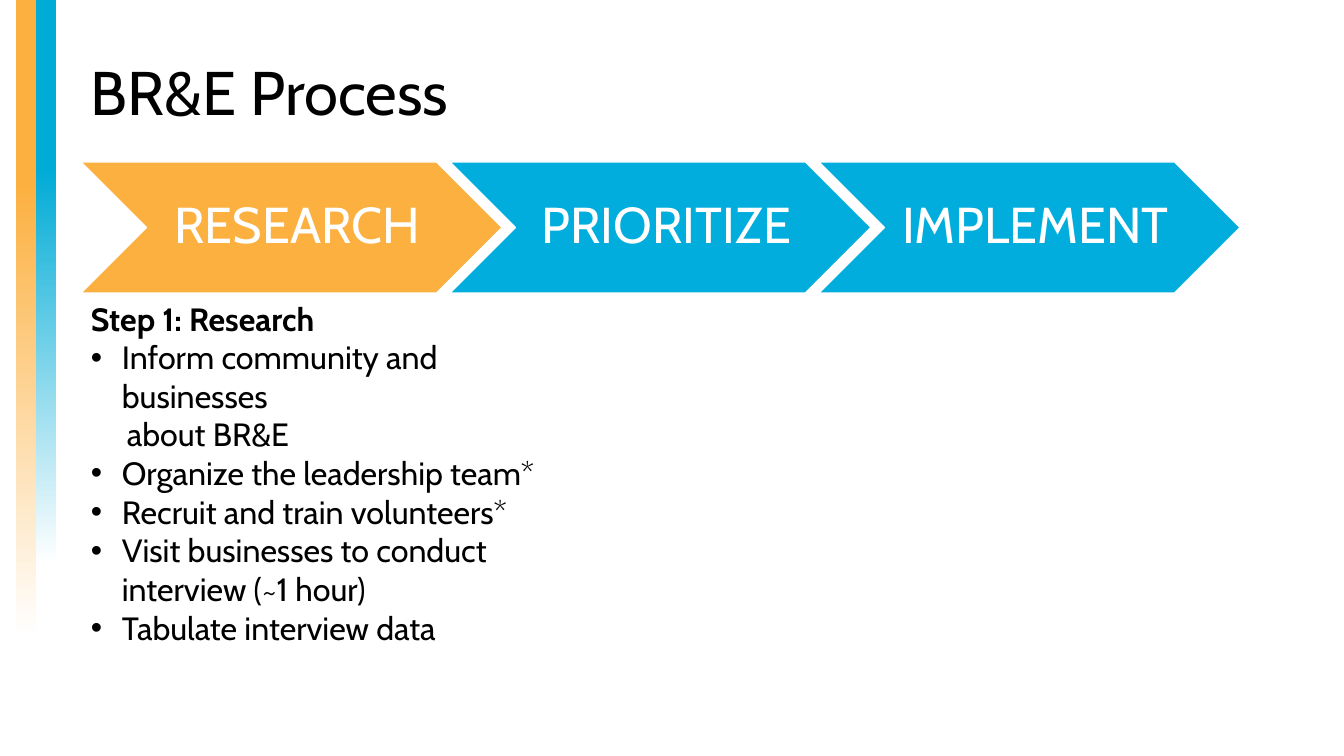
from dataclasses import dataclass

from lxml import etree
from pptx import Presentation
from pptx.dml.color import RGBColor
from pptx.enum.shapes import MSO_SHAPE as SHAPE
from pptx.enum.text import MSO_ANCHOR as ANCHOR, PP_ALIGN as ALIGN
from pptx.oxml.ns import qn
from pptx.util import Pt


@dataclass(frozen=True)
class Theme:
    font: str = "Cabin"
    bullet_font: str = "Arial"
    ink: str = "000000"
    white: str = "FFFFFF"
    active: str = "FBB040"
    step: str = "00ADDC"
    bar_orange: str = "FCB040"
    bar_blue: str = "00ABD6"
    title_size: int = 44
    step_size: int = 36
    body_size: int = 23


THEME = Theme()

TITLE = "BR&E Process"
STEPS = ["RESEARCH", "PRIORITIZE", "IMPLEMENT"]
ACTIVE_STEP = "RESEARCH"
HEADING, BULLET, CONTINUED = "heading", "bullet", "continued"
BODY = [
    (HEADING, "Step 1: Research"),
    (BULLET, "Inform community and businesses"),
    (CONTINUED, "about BR&E"),
    (BULLET, "Organize the leadership team*"),
    (BULLET, "Recruit and train volunteers*"),
    (BULLET, "Visit businesses to conduct interview (~1 hour)"),
    (BULLET, "Tabulate interview data"),
]
# left, height, colour, percent of the bar that stays solid
SIDE_BARS = [
    (16, 638, THEME.bar_orange, 29),
    (36, 564, THEME.bar_blue, 30),
]

PX = 914400 / 100.8
SLIDE_W, SLIDE_H = 1344, 756
BAR_W = 20
LEFT = 81
TITLE_BOX = (LEFT, 23, 1231, 146)
BODY_BOX = (LEFT, 294, 486, 361)
STEP_TOP, STEP_W, STEP_H, STEP_PITCH = 162, 421, 131, 369
LABEL_INSET, LABEL_W = 66, 290
BULLET_INDENT, CONTINUED_INDENT = 31, 36


def px(n):
    return round(n * PX)


def rgb(color):
    return RGBColor.from_string(color)


def add_shape(s, kind, box, color):
    sp = s.shapes.add_shape(kind, *map(px, box))
    sp.shadow.inherit = False
    sp.fill.solid()
    sp.fill.fore_color.rgb = rgb(color)
    sp.line.fill.background()
    return sp


def add_text_box(s, box, anchor=ANCHOR.TOP):
    tf = s.shapes.add_textbox(*map(px, box)).text_frame
    tf.word_wrap = True
    tf.vertical_anchor = anchor
    return tf


def write(p, text, size, color=THEME.ink, bold=False, align=ALIGN.LEFT, spacing=1.0):
    p.alignment = align
    p.line_spacing = spacing
    r = p.add_run()
    r.text = text
    r.font.name = THEME.font
    r.font.size = Pt(size)
    r.font.bold = bold
    r.font.color.rgb = rgb(color)


def indent(p, left, bullet=False):
    pPr = p._p.get_or_add_pPr()
    pPr.set("marL", str(px(left)))
    if bullet:
        pPr.set("indent", str(-px(left)))
        etree.SubElement(pPr, qn("a:buFont")).set("typeface", THEME.bullet_font)
        etree.SubElement(pPr, qn("a:buChar")).set("char", "•")


def add_side_bar(s, left, height, color, solid):
    """Draw a vertical bar that fades to white towards its foot."""
    fill = add_shape(s, SHAPE.RECTANGLE, (left, 0, BAR_W, height), color).fill
    fill.gradient()
    fill.gradient_angle = 270
    stops = [(solid / 100, color), (1, THEME.white)]
    for stop, (position, stop_color) in zip(fill.gradient_stops, stops):
        stop.position = position
        stop.color.rgb = rgb(stop_color)


def add_step(s, index, name):
    left = LEFT + index * STEP_PITCH
    color = THEME.active if name == ACTIVE_STEP else THEME.step
    sp = add_shape(s, SHAPE.CHEVRON, (left, STEP_TOP, STEP_W, STEP_H), color)
    sp.line.color.rgb = rgb(THEME.white)
    sp.line.width = Pt(1)
    box = (left + LABEL_INSET, STEP_TOP, LABEL_W, STEP_H)
    tf = add_text_box(s, box, ANCHOR.MIDDLE)
    tf.margin_left = px(16)
    tf.margin_top = tf.margin_right = tf.margin_bottom = px(5)
    write(tf.paragraphs[0], name, THEME.step_size, color=THEME.white,
          align=ALIGN.CENTER, spacing=0.9)


def add_body(s):
    tf = add_text_box(s, BODY_BOX)
    for i, (kind, text) in enumerate(BODY):
        p = tf.add_paragraph() if i else tf.paragraphs[0]
        if kind == BULLET:
            indent(p, BULLET_INDENT, bullet=True)
        elif kind == CONTINUED:
            indent(p, CONTINUED_INDENT)
        write(p, text, THEME.body_size, bold=kind == HEADING)


def main():
    prs = Presentation()
    prs.slide_width, prs.slide_height = px(SLIDE_W), px(SLIDE_H)
    s = prs.slides.add_slide(prs.slide_layouts[6])
    for bar in SIDE_BARS:
        add_side_bar(s, *bar)
    title = add_text_box(s, TITLE_BOX, ANCHOR.MIDDLE)
    write(title.paragraphs[0], TITLE, THEME.title_size, spacing=0.9)
    for i, name in enumerate(STEPS):
        add_step(s, i, name)
    add_body(s)
    prs.save("out.pptx")


if __name__ == "__main__":
    main()
